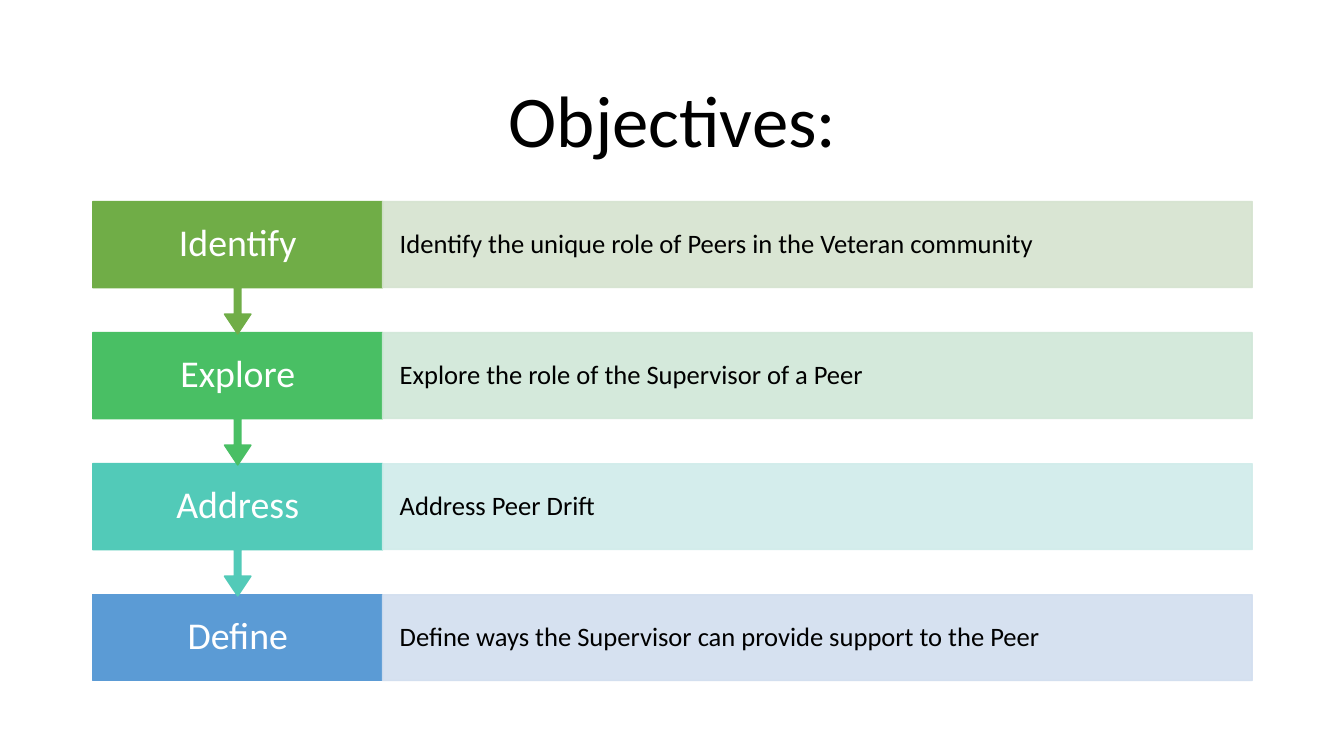
import dataclasses

import lxml.etree
import pptx
import pptx.dml.color
import pptx.enum.shapes
import pptx.enum.text
import pptx.oxml.ns
import pptx.util

SHAPE = pptx.enum.shapes.MSO_SHAPE
ALIGN = pptx.enum.text.PP_ALIGN


@dataclasses.dataclass(frozen=True)
class Theme:
    """Colours, font and type sizes of the slide."""
    font: str = "Calibri"
    ink: str = "000000"
    verb_ink: str = "FFFFFF"
    title_size: int = 52
    verb_size: int = 27
    goal_size: int = 19
    strong: tuple = ("70AD47", "49BF64", "52CAB8", "5B9BD5")
    pale: tuple = ("D5E3CF", "D0E7D8", "D0ECEA", "D2DEEF")
    pale_opacity: int = 90


class ObjectivesSlide:
    """Draws on one slide over a grid of four columns and four rows."""
    LEFT, TOP, COLUMN, ROW = 0.92, 2.0, 2.875, 1.3

    def __init__(self, deck, theme):
        """Add a blank slide and keep the theme."""
        self.theme = theme
        self.slide = deck.slides.add_slide(deck.slide_layouts[6])

    def place(self, column, row, columns, rows):
        """Turn grid units into left, top, width and height."""
        return [pptx.util.Inches(length) for length in (
            self.LEFT + column * self.COLUMN, self.TOP + row * self.ROW,
            columns * self.COLUMN, rows * self.ROW)]

    def block(self, kind, area, colour, opacity=100):
        """Add a filled and outlined shape."""
        shape = self.slide.shapes.add_shape(kind, *self.place(*area))
        shape.shadow.inherit = False
        shape.line.width = pptx.util.Pt(1)
        for paint in (shape.fill, shape.line.fill):
            paint.solid()
            paint.fore_color.rgb = pptx.dml.color.RGBColor.from_string(colour)
        if opacity < 100:
            tag = pptx.oxml.ns.qn("a:srgbClr")
            for tint in shape._element.spPr.iter(tag):
                alpha = lxml.etree.SubElement(tint, pptx.oxml.ns.qn("a:alpha"))
                alpha.set("val", str(opacity * 1000))
        return shape

    def callout(self, area, colour):
        """Add a box whose arrow points down to the next row."""
        callout = self.block(SHAPE.UP_ARROW_CALLOUT, area, colour)
        callout.rotation = 180
        for index, share in enumerate((0.05, 0.1, 0.15, 0.65)):
            callout.adjustments[index] = share

    def text(self, words, area, size, colour, align, insets):
        """Add a vertically centred line of text."""
        frame = self.slide.shapes.add_textbox(*self.place(*area)).text_frame
        frame.word_wrap = True
        frame.vertical_anchor = pptx.enum.text.MSO_ANCHOR.MIDDLE
        side, end = map(pptx.util.Inches, insets)
        frame.margin_left = frame.margin_right = side
        frame.margin_top = frame.margin_bottom = end
        paragraph = frame.paragraphs[0]
        paragraph.alignment = align
        paragraph.line_spacing = 0.9
        run = paragraph.add_run()
        run.text = words
        run.font.name = self.theme.font
        run.font.size = pptx.util.Pt(size)
        run.font.color.rgb = pptx.dml.color.RGBColor.from_string(colour)

    def objective(self, row, verb, goal, is_last):
        """Add one verb with its goal beside it."""
        theme = self.theme
        verb_area, goal_area = (0, row, 1, 0.655), (1, row, 3, 0.655)
        if is_last:
            self.block(SHAPE.RECTANGLE, verb_area, theme.strong[row])
        else:
            self.callout((0, row, 1, 1.01), theme.strong[row])
        self.text(verb, verb_area, theme.verb_size, theme.verb_ink,
                  ALIGN.CENTER, (0.2, 0.21))
        self.block(SHAPE.RECTANGLE, goal_area, theme.pale[row],
                   theme.pale_opacity)
        self.text(goal, goal_area, theme.goal_size, theme.ink,
                  ALIGN.LEFT, (0.17, 0.26))


def main():
    """Build and save the deck."""
    objectives = (
        ("Identify", "Identify the unique role of Peers in the Veteran community"),
        ("Explore", "Explore the role of the Supervisor of a Peer"),
        ("Address", "Address Peer Drift"),
        ("Define", "Define ways the Supervisor can provide support to the Peer"),
    )
    deck = pptx.Presentation()
    deck.slide_width = pptx.util.Inches(13.33)
    deck.slide_height = pptx.util.Inches(7.5)
    theme = Theme()
    page = ObjectivesSlide(deck, theme)
    page.text("Objectives:", (0, -1.07, 4, 0.95), theme.title_size, theme.ink,
              ALIGN.CENTER, (0.1, 0.05))
    last = len(objectives) - 1
    for row in range(last, -1, -1):
        page.objective(row, *objectives[row], is_last=row == last)
    deck.save("out.pptx")


if __name__ == "__main__":
    main()
